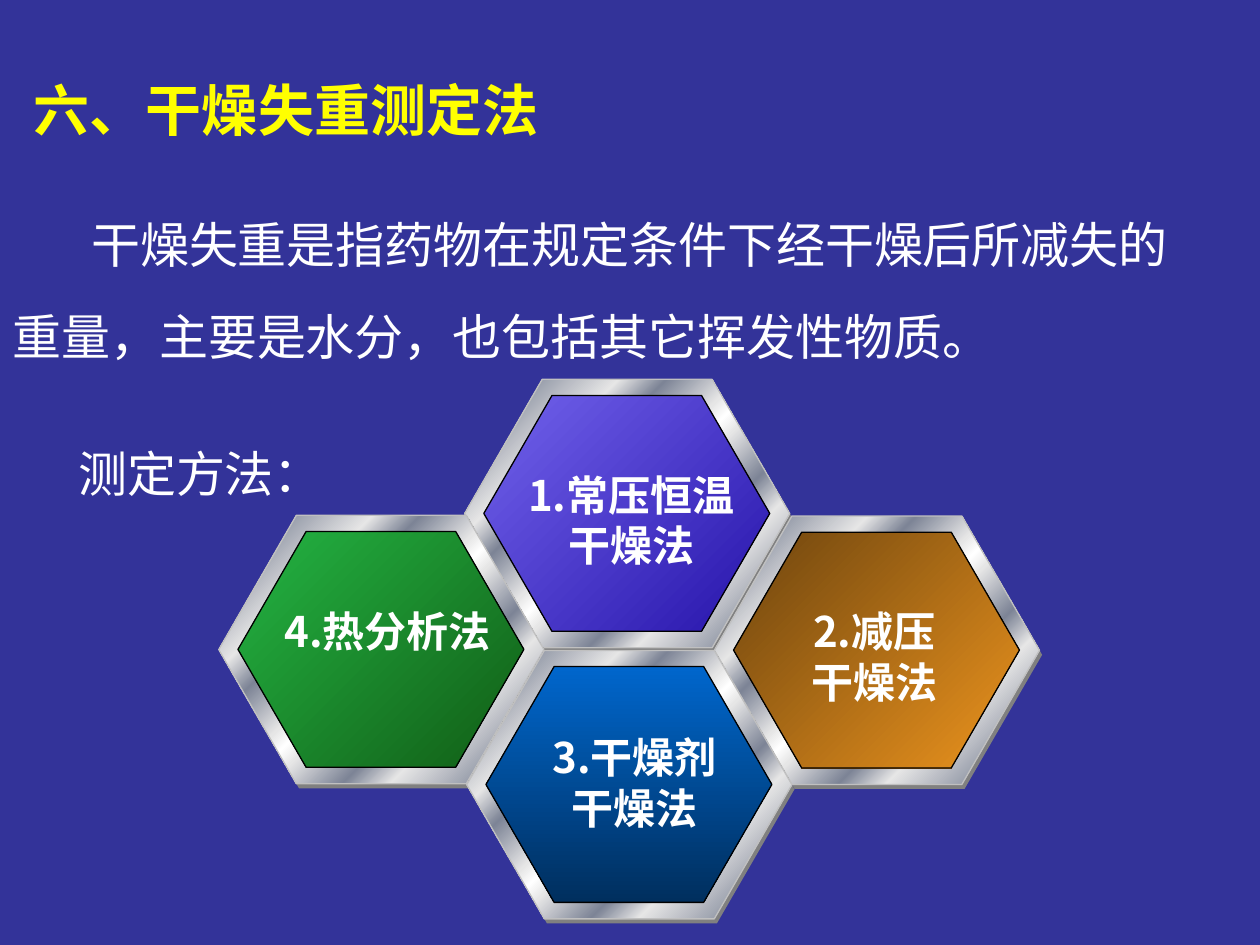
from lxml import etree
from pptx import Presentation
from pptx.dml.color import RGBColor
from pptx.enum.shapes import MSO_SHAPE as Shape
from pptx.enum.text import MSO_ANCHOR as Anchor, MSO_AUTO_SIZE as AutoSize, PP_ALIGN as Align
from pptx.oxml.ns import qn
from pptx.util import Pt

CJK = "Noto Sans CJK SC"
STEEL = [(0, "E6E6E6"), (8, "7D8496"), (26, "E6E6E6"), (34, "7D8496"),
         (46, "E6E6E6"), (50, "FFFFFF"), (54, "E6E6E6"), (66, "7D8496"),
         (74, "E6E6E6"), (92, "7D8496"), (100, "E6E6E6")]
RIM_SIZE = (185.8, 153.4)
CORE_SIZE = (163.4, 134.8)

# rim left, top; core colours; gradient angle; label offset and width; label lines
METHODS = [
    (265.5, 216.8, "7262EC", "2614AA", 45, 27.6, 47.6, 135.4, ["1.常压恒温", "干燥法"]),
    (125, 294.5, "24B443", "115D16", 45, 28.8, 47.8, 135.4, ["4.热分析法"]),
    (408.2, 294.9, "6D440E", "EC941E", 45, 47.5, 47.3, 87.8, ["2.减压", "干燥法"]),
    (266.7, 371.7, "0066CC", "002F5E", 90, 40.5, 42.4, 110.9, ["3.干燥剂", "干燥法"]),
]


def color(value):
    return RGBColor.from_string(value)


def apply(target, values):
    for name, value in values.items():
        setattr(target, name, value)


def place(shape, left, top, width, height):
    apply(shape, {"left": Pt(left), "top": Pt(top), "width": Pt(width), "height": Pt(height)})


def write(paragraph, text, size, fill, latin, bold=False):
    run = paragraph.add_run()
    run.text = text
    apply(run.font, {"size": Pt(size), "bold": bold, "name": latin})
    run.font.color.rgb = color(fill)
    east_asian = etree.SubElement(run.font._element, qn("a:ea"))
    east_asian.set("typeface", CJK)


def set_gradient(fill, stops, angle):
    fill.gradient()
    fill.gradient_angle = 360 - angle
    stop_list = fill._xPr.find(qn("a:gradFill")).find(qn("a:gsLst"))
    for old in list(stop_list):
        stop_list.remove(old)
    for position, value in stops:
        stop = etree.SubElement(stop_list, qn("a:gs"), pos=str(position * 1000))
        etree.SubElement(stop, qn("a:srgbClr"), val=value)


def add_hexagon(shapes, left, top, size, stops, angle=45, line=None):
    shape = shapes.add_shape(Shape.HEXAGON, Pt(left), Pt(top), Pt(size[0]), Pt(size[1]))
    shape.adjustments[0] = 0.289
    shape.shadow.inherit = False
    if len(stops) > 1:
        set_gradient(shape.fill, stops, angle)
    else:
        shape.fill.solid()
        shape.fill.fore_color.rgb = color(stops[0][1])
    if line:
        shape.line.color.rgb = color(line)
        shape.line.width = Pt(0.75)
    else:
        shape.line.fill.background()


def add_label(shapes, left, top, width, lines):
    box = shapes.add_textbox(Pt(left), Pt(top), Pt(width), Pt(7 + 29 * len(lines)))
    frame = box.text_frame
    frame.word_wrap = True
    for index, text in enumerate(lines):
        paragraph = frame.add_paragraph() if index else frame.paragraphs[0]
        apply(paragraph, {"alignment": Align.CENTER, "line_spacing": Pt(29)})
        write(paragraph, text, 24, "FFFFFF", CJK, bold=True)


def add_method(slide, left, top, start, end, angle, label_x, label_y, label_width, lines):
    """Steel-rimmed hexagon with an offset shade, a coloured core and a label."""
    shapes = slide.shapes.add_group_shape().shapes
    add_hexagon(shapes, left + 1.5, top + 2.6, RIM_SIZE, [(0, "808080")])
    add_hexagon(shapes, left, top, RIM_SIZE, STEEL, line="C0C0C0")
    add_hexagon(shapes, left + 11, top + 9.2, CORE_SIZE, [(0, start), (100, end)], angle, "000000")
    add_label(shapes, left + label_x, top + label_y, label_width, lines)


def add_title(slide, left, top, width, height):
    title = slide.shapes.title
    place(title, left, top, width, height)
    apply(title.text_frame, {"vertical_anchor": Anchor.MIDDLE, "auto_size": AutoSize.NONE,
                             "word_wrap": True, "margin_top": Pt(13.5)})
    paragraph = title.text_frame.paragraphs[0]
    paragraph.alignment = Align.LEFT
    write(paragraph, "六、干燥失重测定法", 32, "FFFF00", "Times New Roman", bold=True)


def add_definition(slide, left, top, width, height):
    frame = slide.shapes.add_textbox(Pt(left), Pt(top), Pt(width), Pt(height)).text_frame
    apply(frame, {"word_wrap": True, "margin_top": Pt(20.8)})
    rows = [("干燥失重是指药物在规定条件下经干燥后所减失的重量，主要是水分，也包括其它挥发性物质。", 45),
            ("测定方法：", 37.6)]
    for index, (text, indent) in enumerate(rows):
        paragraph = frame.add_paragraph() if index else frame.paragraphs[0]
        apply(paragraph, {"line_spacing": Pt(52.6), "space_before": Pt(25.4 * index)})
        paragraph._p.get_or_add_pPr().set("indent", str(Pt(indent)))
        write(paragraph, text, 28, "FFFFFF", "Arial")


def main():
    presentation = Presentation()
    apply(presentation, {"slide_width": Pt(720), "slide_height": Pt(540)})
    slide = presentation.slides.add_slide(presentation.slide_layouts[5])
    slide.background.fill.solid()
    slide.background.fill.fore_color.rgb = color("333399")
    add_title(slide, 12.2, 12.2, 612, 90)
    add_definition(slide, 0, 82.8, 696, 221)
    for method in METHODS:
        add_method(slide, *method)
    presentation.save("out.pptx")


if __name__ == "__main__":
    main()
